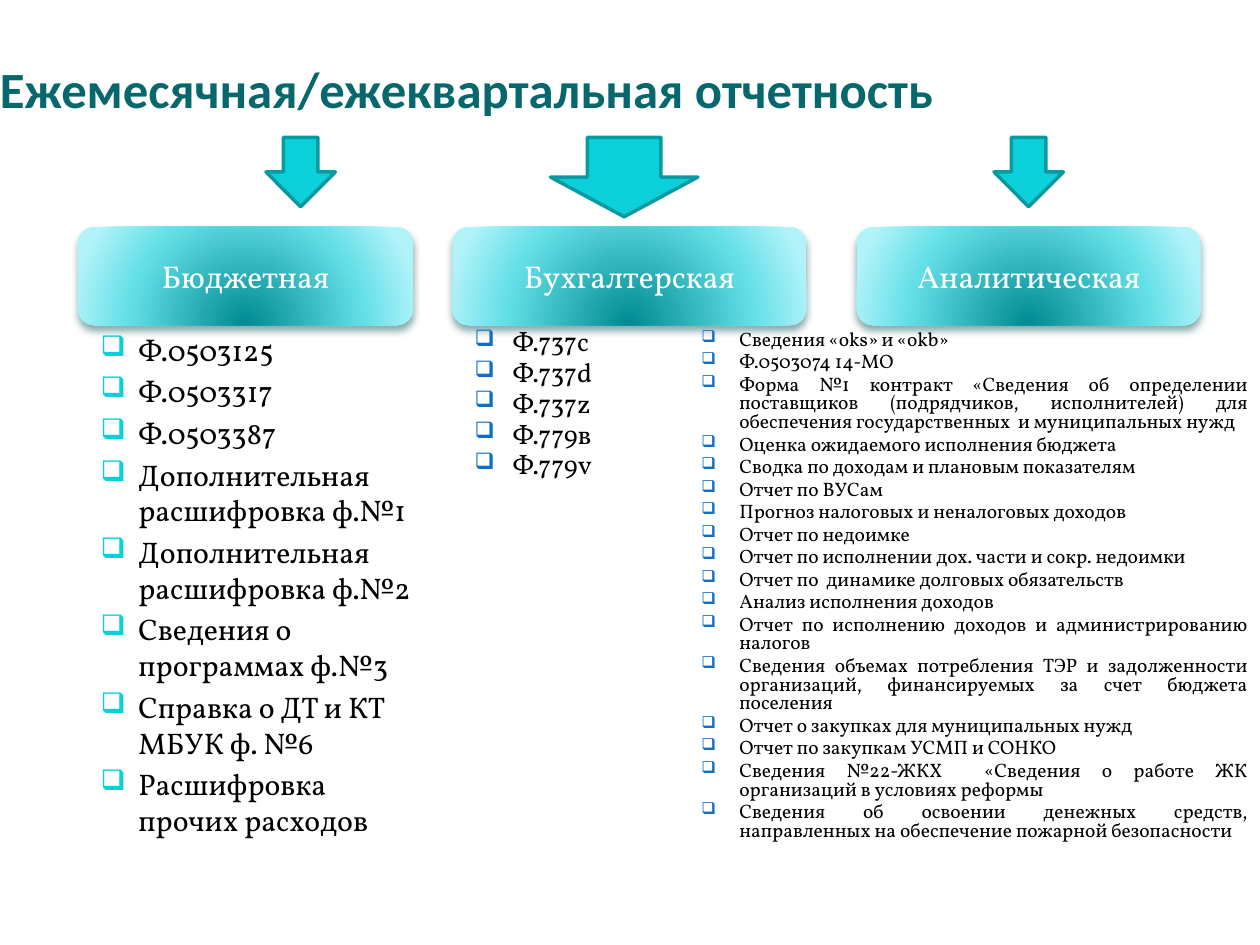
from lxml import etree
from pptx import Presentation
from pptx.dml.color import RGBColor
from pptx.enum.shapes import MSO_SHAPE as SHAPE
from pptx.enum.text import MSO_ANCHOR as ANCHOR, PP_ALIGN as ALIGN
from pptx.oxml.ns import qn
from pptx.util import Pt

TITLE = RGBColor(0x06, 0x68, 0x6C)
BLACK = RGBColor(0x00, 0x00, 0x00)
WHITE = RGBColor(0xFF, 0xFF, 0xFF)
CYAN = RGBColor(0x0B, 0xD0, 0xD9)
CYAN_EDGE = RGBColor(0x08, 0x9A, 0xA1)
BLUE = RGBColor(0x0F, 0x6F, 0xC6)
SHADOW = RGBColor(0x02, 0x4B, 0x4E)
GLOW = [(0, RGBColor(0x00, 0x8A, 0x91)), (68, RGBColor(0x64, 0xDF, 0xE7)),
        (100, RGBColor(0xB1, 0xF3, 0xF9))]
BODY_FONT = "Vollkorn"
INDENT = 21.6

BUDGET = [
    "Ф.0503125",
    "Ф.0503317",
    "Ф.0503387",
    "Дополнительная расшифровка ф.№1",
    "Дополнительная расшифровка ф.№2",
    "Сведения о программах ф.№3",
    "Справка о ДТ и КТ МБУК ф. №6",
    "Расшифровка прочих расходов",
]
ACCOUNTING = ["Ф.737с", "Ф.737d", "Ф.737z", "Ф.779в", "Ф.779v"]
ANALYTICS = [
    "Сведения «oks» и «okb»",
    "Ф.0503074 14-МО",
    "Форма №1 контракт «Сведения об определении поставщиков (подрядчиков, "
    "исполнителей) для обеспечения государственных  и муниципальных нужд",
    "Оценка ожидаемого исполнения бюджета",
    "Сводка по доходам и плановым показателям",
    "Отчет по ВУСам",
    "Прогноз налоговых и неналоговых доходов",
    "Отчет по недоимке",
    "Отчет по исполнении дох. части и сокр. недоимки",
    "Отчет по  динамике долговых обязательств",
    "Анализ исполнения доходов",
    "Отчет по исполнению доходов и администрированию налогов",
    "Сведения объемах потребления ТЭР и задолженности организаций, "
    "финансируемых за счет бюджета поселения",
    "Отчет о закупках для муниципальных нужд",
    "Отчет по закупкам УСМП и СОНКО",
    "Сведения №22-ЖКХ  «Сведения о работе ЖК организаций в условиях реформы",
    "Сведения об освоении денежных средств, направленных на обеспечение "
    "пожарной безопасности",
]


def points(box):
    return [Pt(v) for v in box]


def add_xml(parent, tag, **attrs):
    return etree.SubElement(parent, qn(tag), {k: str(v) for k, v in attrs.items()})


def style_font(p, size, color, name=BODY_FONT, bold=False):
    for r in p.runs:
        r.font.size, r.font.name, r.font.bold = Pt(size), name, bold
        r.font.color.rgb = color


def add_title(slide, box, text):
    tf = slide.shapes.add_textbox(*points(box)).text_frame
    tf.word_wrap = True
    tf.vertical_anchor = ANCHOR.BOTTOM
    tf.margin_left = tf.margin_right = tf.margin_bottom = 0
    tf.text = text
    style_font(tf.paragraphs[0], 29, TITLE, "Calibri", True)


def add_arrow(slide, box):
    sp = slide.shapes.add_shape(SHAPE.DOWN_ARROW, *points(box))
    sp.shadow.inherit = False
    sp.fill.solid()
    sp.fill.fore_color.rgb = CYAN
    sp.line.color.rgb = CYAN_EDGE
    sp.line.width = Pt(2)


def add_heading(slide, box, text):
    sp = slide.shapes.add_shape(SHAPE.ROUNDED_RECTANGLE, *points(box))
    sp.line.fill.background()

    # Radial gradient centred below the box
    sp.fill.gradient()
    grad = sp._element.spPr.find(qn("a:gradFill"))
    for child in list(grad):
        grad.remove(child)
    stops = add_xml(grad, "a:gsLst")
    for pos, color in GLOW:
        add_xml(add_xml(stops, "a:gs", pos=pos * 1000), "a:srgbClr", val=color)
    radial = add_xml(grad, "a:path", path="circle")
    add_xml(radial, "a:fillToRect", l=50000, t=130000, r=50000, b=-30000)

    # Soft shadow
    sp.shadow.inherit = False
    effects = sp._element.spPr.find(qn("a:effectLst"))
    shadow = add_xml(effects, "a:outerShdw", blurRad=Pt(4.5), dist=Pt(3),
                     dir=90 * 60000, rotWithShape=0)
    add_xml(add_xml(shadow, "a:srgbClr", val=SHADOW), "a:alpha", val=48000)

    tf = sp.text_frame
    tf.vertical_anchor = ANCHOR.MIDDLE
    tf.text = text
    tf.paragraphs[0].alignment = ALIGN.CENTER
    style_font(tf.paragraphs[0], 18, WHITE)


def add_list(slide, box, items, size, bullet, bullet_pct, spacing=1.0,
             align=ALIGN.LEFT):
    tf = slide.shapes.add_textbox(*points(box)).text_frame
    tf.word_wrap = True
    tf.text = "\n".join(items)
    for p in tf.paragraphs:
        p.alignment = align
        p.line_spacing = spacing
        p.space_before = Pt(round(size * 0.2, 1))
        style_font(p, size, BLACK)
        pPr = p._p.get_or_add_pPr()
        pPr.set("marL", str(Pt(INDENT)))
        pPr.set("indent", str(-Pt(INDENT)))
        add_xml(add_xml(pPr, "a:buClr"), "a:srgbClr", val=bullet)
        add_xml(pPr, "a:buSzPct", val=bullet_pct * 1000)
        add_xml(pPr, "a:buChar", char="❑")


def main():
    prs = Presentation()
    prs.slide_width, prs.slide_height = Pt(720), Pt(540)
    slide = prs.slides.add_slide(prs.slide_layouts[6])

    add_title(slide, (0, 0, 720, 67.7), "Ежемесячная/ежеквартальная отчетность")

    # Headings: left, width, text
    for left, width, text in [(44.6, 191.5, "Бюджетная"),
                              (258.5, 202.3, "Бухгалтерская"),
                              (489.6, 196.6, "Аналитическая")]:
        add_heading(slide, (left, 129.6, width, 56.2), text)

    # Arrows: left, width, height
    for left, width, height in [(152, 39.6, 39.6), (314.6, 84.2, 45.4),
                                (568, 39.6, 39.6)]:
        add_arrow(slide, (left, 78.5, width, height))

    # Report lists
    top = 185.8
    add_list(slide, (50.4, top, 191.5, 326), BUDGET, 17, CYAN, 95)
    add_list(slide, (264.2, top, 185.8, 101.5), ACCOUNTING, 15.2, BLUE, 85, 0.8)
    add_list(slide, (393.8, top, 326.2, 326), ANALYTICS, 11.1, BLUE, 85, 0.8,
             ALIGN.JUSTIFY)

    prs.save("out.pptx")


if __name__ == "__main__":
    main()
